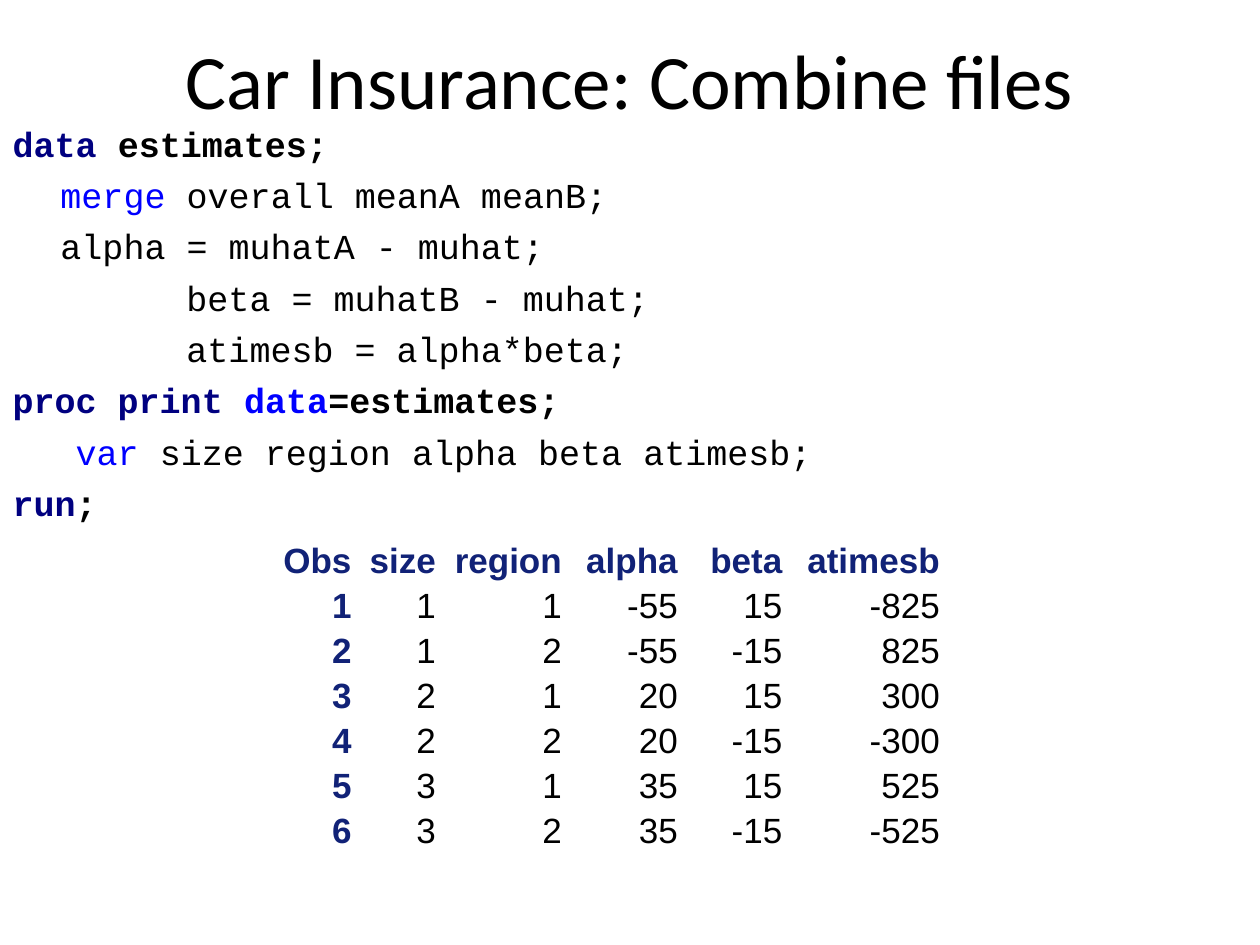
from pptx import Presentation
from pptx.util import Inches, Pt
from pptx.dml.color import RGBColor
from pptx.enum.text import MSO_ANCHOR, MSO_AUTO_SIZE, PP_ALIGN
from lxml import etree

MIDDLE, TOP = MSO_ANCHOR.MIDDLE, MSO_ANCHOR.TOP
CENTER, RIGHT, LEFT = PP_ALIGN.CENTER, PP_ALIGN.RIGHT, PP_ALIGN.LEFT
NO_FIT = MSO_AUTO_SIZE.NONE
NS = "{http://schemas.openxmlformats.org/drawingml/2006/main}"
COLORS = {"black": "000000", "navy": "000080", "blue": "0000FF", "head": "112277"}


def add_run(para, text, font, size, color, bold=False):
    run = para.add_run()
    run.text = text
    run.font.name = font
    run.font.size = Pt(size)
    run.font.bold = bold
    run.font.color.rgb = RGBColor.from_string(COLORS[color])


def place(shape, left, top, width, height):
    shape.left, shape.top = Inches(left), Inches(top)
    shape.width, shape.height = Inches(width), Inches(height)


deck = Presentation()
deck.slide_width, deck.slide_height = Inches(10), Inches(7.5)
slide = deck.slides.add_slide(deck.slide_layouts[1])

# Title
title = slide.shapes.title
place(title, 0, 0, 10, 1.25)
frame = title.text_frame
frame.auto_size = NO_FIT
frame.vertical_anchor = MIDDLE
para = frame.paragraphs[0]
para.alignment = CENTER
add_run(para, "Car Insurance: Combine files", "Calibri", 44, "black")

# Program code: indent in inches, then runs of text, colour and weight
code = [
    (0, [("data", "navy", True), (" estimates;", "black", True)]),
    (0.38, [("merge", "blue", False), (" overall meanA meanB;", "black", False)]),
    (0.38, [("alpha = muhatA - muhat;", "black", False)]),
    (1.38, [("beta = muhatB - muhat;", "black", False)]),
    (1.38, [("atimesb = alpha*beta;", "black", False)]),
    (0, [("proc print ", "navy", True), ("data", "blue", True),
         ("=estimates;", "black", True)]),
    (0.5, [("var", "blue", False), (" size region alpha beta atimesb;", "black", False)]),
    (0, [("run", "navy", True), (";", "black", True)]),
]
body = slide.placeholders[1]
place(body, 0, 0.92, 10, 3.42)
frame = body.text_frame
frame.auto_size = NO_FIT
frame.vertical_anchor = TOP
for i, (indent, runs) in enumerate(code):
    para = frame.paragraphs[0] if i == 0 else frame.add_paragraph()
    para.alignment = LEFT
    para.space_before = Pt(5.3)
    props = para._p.get_or_add_pPr()
    props.set("marL", str(Inches(indent)))
    props.set("indent", "0")
    etree.SubElement(props, NS + "buNone")
    for text, color, bold in runs:
        add_run(para, text, "Courier New", 20, color, bold)

# Table of estimates
rows = [
    ["Obs", "size", "region", "alpha", "beta", "atimesb"],
    [1, 1, 1, -55, 15, -825],
    [2, 1, 2, -55, -15, 825],
    [3, 2, 1, 20, 15, 300],
    [4, 2, 2, 20, -15, -300],
    [5, 3, 1, 35, 15, 525],
    [6, 3, 2, 35, -15, -525],
]
widths = [0.67, 0.67, 1, 0.92, 0.83, 1.25]
table = slide.shapes.add_table(len(rows), len(widths), Inches(2.17), Inches(4.25),
                               Inches(sum(widths)), Inches(2.5)).table
table.first_row = table.horz_banding = False
for col, width in zip(table.columns, widths):
    col.width = Inches(width)
for r, row in enumerate(rows):
    for c, value in enumerate(row):
        cell = table.cell(r, c)
        cell.fill.background()
        cell.vertical_anchor = MIDDLE
        cell.margin_left = cell.margin_right = Inches(0.05)
        cell.margin_top = cell.margin_bottom = 0
        para = cell.text_frame.paragraphs[0]
        para.alignment = RIGHT
        para.line_spacing = 1.15
        para.space_before = para.space_after = Pt(5)
        head = r == 0 or c == 0
        add_run(para, str(value), "Arial", 20, "head" if head else "black", head)

# Clear the style's grid lines
style = table._tbl.tblPr.find(NS + "tableStyleId")
style.text = "{2D5ABB26-0587-4C30-8999-92F81FD0307C}"

deck.save("out.pptx")
